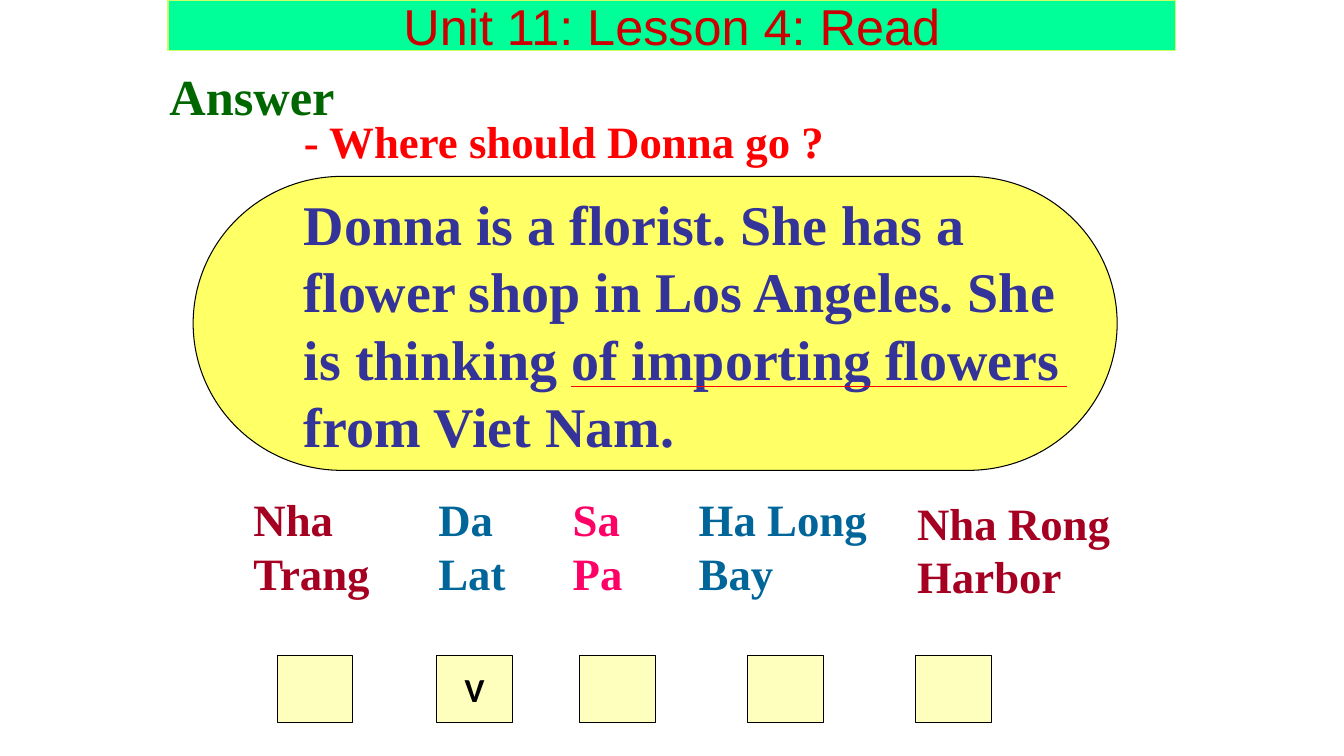
import pptx
import pptx.util
import pptx.dml.color
import pptx.enum.shapes
import pptx.enum.text
import pptx.oxml.ns
from lxml import etree

SHAPE = pptx.enum.shapes.MSO_SHAPE
ALIGN = pptx.enum.text.PP_ALIGN
ANCHOR = pptx.enum.text.MSO_ANCHOR

COLORS = {
    "banner": "00FF99", "rim": "CCFF66", "title": "CC0000",
    "answer": "006600", "ask": "FF0000", "panel": "FFFF66",
    "story": "333399", "wine": "A50021", "teal": "006699",
    "pink": "FF0066", "box": "FFFFBD", "black": "000000",
}
SERIF = "Times New Roman"

TITLE = "Unit 11: Lesson 4: Read"
BANNER = (160, 0, 960, 48)
PANEL = (184, 168, 880, 280)
# text, (left, top, width, height), size, color, alignment
TEXTS = [
    ("Answer", (140, 57, 200, 68), 36, "answer", ALIGN.CENTER),
    ("- Where should Donna go ?", (280, 104, 592, 60), 32, "ask",
     ALIGN.JUSTIFY),
    ("Donna is a florist. She has a flower shop in Los Angeles. "
     "She is thinking of importing flowers from Viet Nam.",
     (280, 176, 756, 266), 40, "story", ALIGN.LEFT),
]
RULE = (544, 368, 1016, 368)
# name, left, top, width, color, left of its box, mark
PLACES = [
    ("Nha Trang", 232, 464, 152, "wine", 264, ""),
    ("Da Lat", 408, 464, 88, "teal", 416, "V"),
    ("Sa Pa", 536, 464, 96, "pink", 552, ""),
    ("Ha Long Bay", 656, 464, 200, "teal", 712, ""),
    ("Nha Rong Harbor", 864, 467, 208, "wine", 872, ""),
]
PLACE_H = 112
BOX_TOP, BOX_W, BOX_H = 624, 72, 64


def px(*vals):
    return [pptx.util.Emu(val * 9525) for val in vals]


def rgb(name):
    return pptx.dml.color.RGBColor.from_string(COLORS[name])


def style(para, face, size, color, bold=True):
    para.font.name = face
    para.font.size = pptx.util.Pt(size)
    para.font.bold = bold
    para.font.color.rgb = rgb(color)


def paint(shape, fill, line):
    shape.fill.solid()
    shape.fill.fore_color.rgb = rgb(fill)
    shape.line.color.rgb = rgb(line)
    shape.line.width = pptx.util.Pt(0.75)


def add_text(slide, text, place, size, color, align):
    frame = slide.shapes.add_textbox(*px(*place)).text_frame
    frame.word_wrap = True
    para = frame.paragraphs[0]
    para.text = text
    para.alignment = align
    para.line_spacing = pptx.util.Pt(size * 1.2)
    style(para, SERIF, size, color)


def add_panel(slide, kind, place, fill):
    shape = slide.shapes.add_shape(kind, *px(*place))
    shape.shadow.inherit = False
    paint(shape, fill, "black")
    return shape


def add_title(slide):
    title = slide.shapes.title
    title.left, title.top, title.width, title.height = px(*BANNER)
    paint(title, "banner", "rim")
    frame = title.text_frame
    frame.text = TITLE
    frame.word_wrap = False
    frame.auto_size = pptx.enum.text.MSO_AUTO_SIZE.NONE
    frame.vertical_anchor = ANCHOR.MIDDLE
    frame.paragraphs[0].alignment = ALIGN.CENTER
    style(frame.paragraphs[0], "Arial", 36, "title", False)


def add_rule(slide):
    kind = pptx.enum.shapes.MSO_CONNECTOR.STRAIGHT
    rule = slide.shapes.add_connector(kind, *px(*RULE))
    rule.line.color.rgb = rgb("ask")
    rule.line.width = pptx.util.Pt(0.75)
    props = rule._element.spPr
    etree.SubElement(props, pptx.oxml.ns.qn("a:effectLst"))


def main():
    deck = pptx.Presentation()
    deck.slide_width, deck.slide_height = px(1280, 720)
    slide = deck.slides.add_slide(deck.slide_layouts[5])
    add_title(slide)
    add_panel(slide, SHAPE.FLOWCHART_TERMINATOR, PANEL, "panel")
    for item in TEXTS:
        add_text(slide, *item)
    add_rule(slide)
    for name, left, top, width, color, box_left, mark in PLACES:
        add_text(slide, name, (left, top, width, PLACE_H), 32, color,
                 ALIGN.LEFT)
        box = add_panel(slide, SHAPE.RECTANGLE,
                        (box_left, BOX_TOP, BOX_W, BOX_H), "box")
        if mark:
            box.text_frame.text = mark
            box.text_frame.vertical_anchor = ANCHOR.MIDDLE
            para = box.text_frame.paragraphs[0]
            para.alignment = ALIGN.CENTER
            style(para, "Calibri", 24, "black")
    deck.save("out.pptx")


if __name__ == "__main__":
    main()
